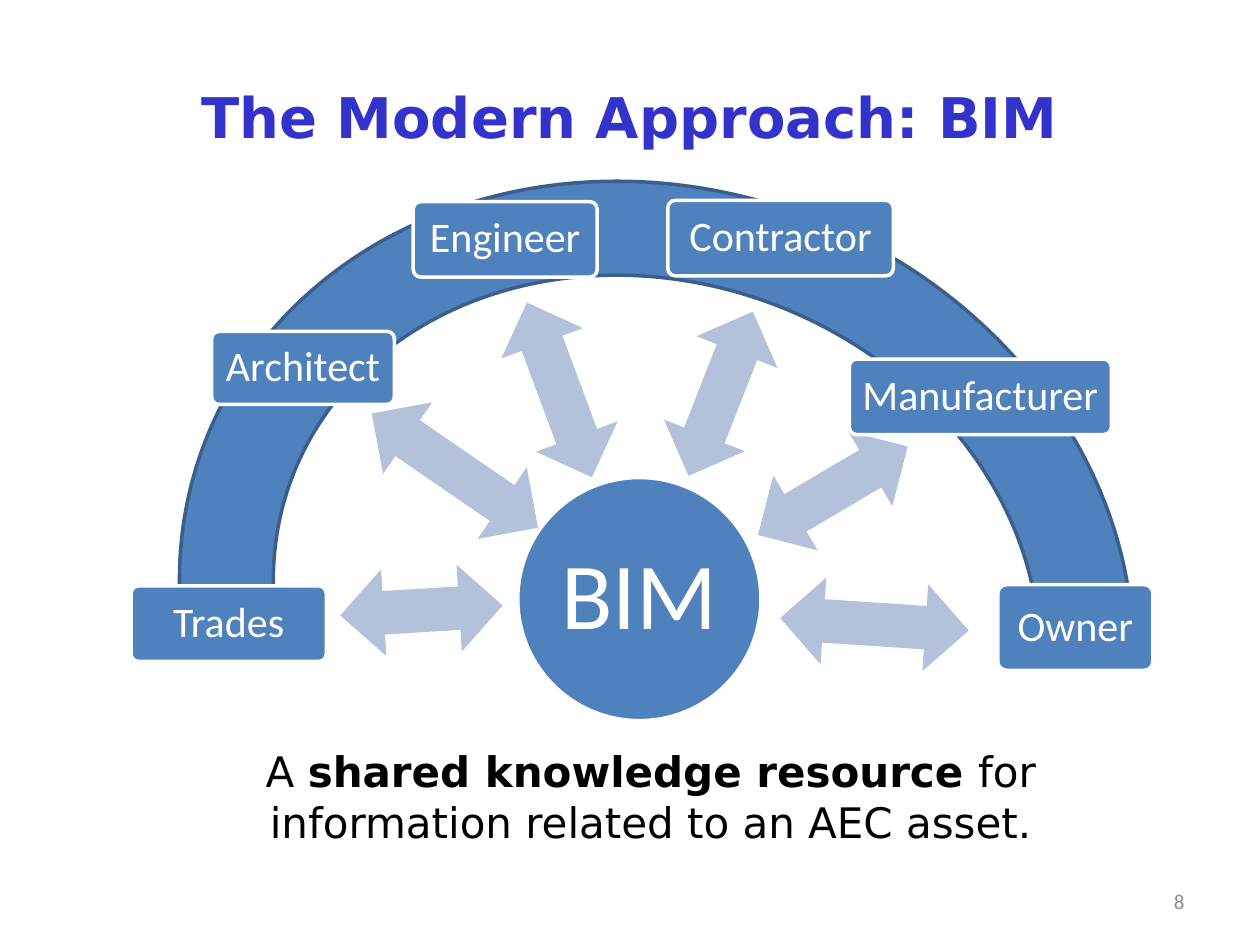
from pptx import Presentation
from pptx.dml.color import RGBColor
from pptx.enum.shapes import MSO_SHAPE as Shape
from pptx.enum.text import MSO_ANCHOR as Anchor, PP_ALIGN as Align
from pptx.util import Inches, Pt

COLORS = {
    "blue": "4F81BD", "edge": "3A5F8C", "arrow": "B3C1DB", "white": "FFFFFF",
    "title": "3333CC", "black": "000000", "gray": "8C8C8C",
}
HEADING_FONT, LABEL_FONT = "DejaVu Sans", "Calibri"


def rgb(name):
    return RGBColor.from_string(COLORS[name])


class SlideBuilder:
    """Holds the current slide and draws each kind of element on it."""

    def __init__(self, slide):
        self.slide = slide

    def fill_text(self, shape, runs, color, align=Align.CENTER, anchor=Anchor.MIDDLE,
                  inset=None, spacing=None, **font_format):
        frame = shape.text_frame
        frame_format = {"word_wrap": True, "vertical_anchor": anchor}
        if inset is not None:
            for side in ("left", "top", "right", "bottom"):
                frame_format[f"margin_{side}"] = Inches(inset)
        for key, value in frame_format.items():
            setattr(frame, key, value)
        paragraph = frame.paragraphs[0]
        paragraph.alignment = align
        if spacing:
            paragraph.line_spacing = spacing
        for text, bold in runs:
            run = paragraph.add_run()
            run.text = text
            for key, value in {**font_format, "bold": bold}.items():
                setattr(run.font, key, value)
            run.font.color.rgb = rgb(color)

    def title(self, box, text):
        title = self.slide.shapes.title
        for key, value in zip(("left", "top", "width", "height"), box):
            setattr(title, key, Inches(value))
        self.fill_text(title, [(text, True)], "title", name=HEADING_FONT, size=Pt(32))

    def text(self, box, runs, color, **style):
        textbox = self.slide.shapes.add_textbox(*map(Inches, box))
        self.fill_text(textbox, runs, color, **style)

    def shape(self, kind, box, fill, line=None, rotation=0, adjustments=()):
        shape = self.slide.shapes.add_shape(kind, *map(Inches, box))
        shape.shadow.inherit = False
        shape.rotation = rotation
        for index, value in enumerate(adjustments):
            shape.adjustments[index] = value
        shape.fill.solid()
        shape.fill.fore_color.rgb = rgb(fill)
        if line:
            shape.line.color.rgb = rgb(line)
            shape.line.width = Pt(2)
        else:
            shape.line.fill.background()
        return shape

    def label(self, kind, box, text, size, inset, adjustments=()):
        shape = self.shape(kind, box, "blue", "white", adjustments=adjustments)
        self.fill_text(shape, [(text, False)], "white", inset=inset, spacing=0.9,
                       name=LABEL_FONT, size=Pt(size))

    def arrow(self, left, top, length, rotation):
        self.shape(Shape.LEFT_RIGHT_ARROW, (left, top, length, 0.69), "arrow",
                   rotation=rotation)


# Each role: name, label box, arrow (left, top, length, rotation)
ROLES = [
    ("Trades", (1.04, 4.65, 1.55, 0.6), (2.7, 4.5, 1.29, 176.5)),
    ("Architect", (1.68, 2.63, 1.45, 0.58), (2.81, 3.39, 1.6, 214.5)),
    ("Engineer", (3.28, 1.6, 1.46, 0.6), (3.7, 2.75, 1.48, 249.6)),
    ("Contractor", (5.3, 1.59, 1.79, 0.6), (5.02, 2.78, 1.4, 291.4)),
    ("Manufacturer", (6.74, 2.85, 2.08, 0.6), (5.92, 3.55, 1.38, 329.4)),
    ("Owner", (7.92, 4.64, 1.23, 0.68), (6.19, 4.61, 1.5, 3.8)),
]


def main():
    deck = Presentation()
    deck.slide_width, deck.slide_height = Inches(10), Inches(7.5)
    builder = SlideBuilder(deck.slides.add_slide(deck.slide_layouts[5]))

    builder.title((0.5, 0.3, 9, 1.25), "The Modern Approach: BIM")

    # Arch behind the roles, and the hub
    builder.shape(Shape.BLOCK_ARC, (1.37, 1.5, 7.68, 6.78), "blue", "edge",
                  rotation=21, adjustments=(95.5, 202.92, 0.11))
    builder.label(Shape.OVAL, (4.11, 3.79, 1.93, 1.93), "BIM", 54, 0.04)

    # Roles linked to the hub
    for role, box, arrow in ROLES:
        builder.arrow(*arrow)
        builder.label(Shape.ROUNDED_RECTANGLE, box, role, 24, 0.05,
                      adjustments=(0.1,))

    # Definition and slide number
    definition = [
        ("A ", False),
        ("shared knowledge resource ", True),
        ("for information related to an AEC asset.", False),
    ]
    builder.text((1.29, 5.87, 7.75, 0.91), definition, "black",
                 anchor=Anchor.TOP, name=HEADING_FONT, size=Pt(24))
    builder.text((7.17, 6.95, 2.33, 0.4), [("8", False)], "gray",
                 align=Align.RIGHT, name=LABEL_FONT, size=Pt(12))

    deck.save("out.pptx")


if __name__ == "__main__":
    main()
